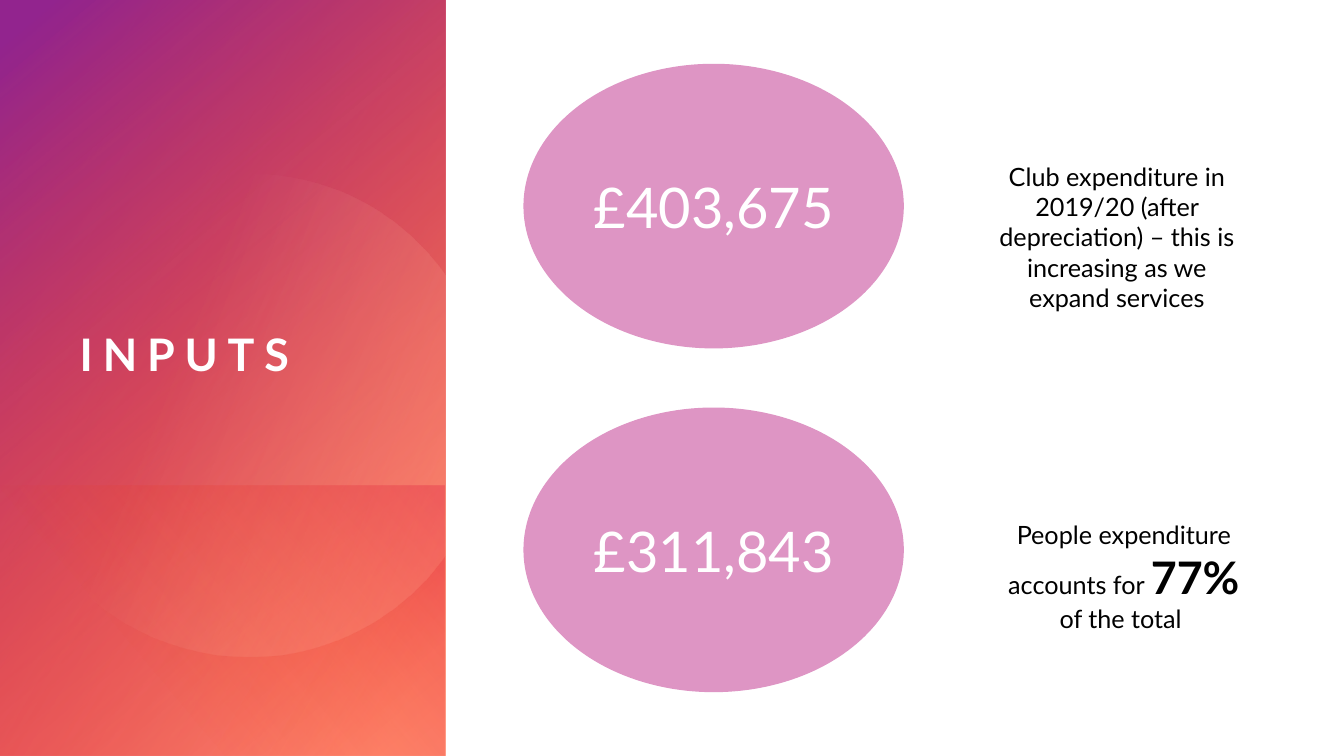
"""Builds the Inputs slide: a gradient title panel beside two expenditure figures."""
from dataclasses import dataclass

from lxml import etree
from pptx import Presentation
from pptx.dml.color import RGBColor
from pptx.enum.shapes import MSO_SHAPE
from pptx.enum.text import MSO_ANCHOR, MSO_AUTO_SIZE, PP_ALIGN
from pptx.oxml.ns import qn
from pptx.util import Emu, Inches, Pt

RECTANGLE, OVAL = MSO_SHAPE.RECTANGLE, MSO_SHAPE.OVAL
MIDDLE, BOTTOM = MSO_ANCHOR.MIDDLE, MSO_ANCHOR.BOTTOM
CENTER, LEFT = PP_ALIGN.CENTER, PP_ALIGN.LEFT
FIXED, GROW = MSO_AUTO_SIZE.NONE, MSO_AUTO_SIZE.SHAPE_TO_FIT_TEXT

WHITE = RGBColor(0xFF, 0xFF, 0xFF)
BLACK = RGBColor(0x00, 0x00, 0x00)
PINK = RGBColor(0xDE, 0x95, 0xC4)
CORAL = RGBColor(0xFF, 0x90, 0x7A)
CRIMSON = RGBColor(0xDA, 0x00, 0x2F)
ORANGE = RGBColor(0xFE, 0x4A, 0x00)
PURPLE = RGBColor(0x92, 0x24, 0x8E)
PEACH = RGBColor(0xFF, 0xDB, 0xCC)

FONT = "Lato"
SLIDE_WIDTH, SLIDE_HEIGHT = Inches(13.333), Inches(7.5)
PANEL_WIDTH = 33.15
OVAL_TOP, OVAL_PITCH = 8.53, 45.47
CURVE_STEPS = 24


@dataclass(frozen=True)
class Area:
    """A rectangle in percent of the slide's width and height."""
    left: float
    top: float
    width: float
    height: float

    def emu(self) -> tuple[Emu, Emu, Emu, Emu]:
        """Return left, top, width and height in EMU."""
        return (*point(self.left, self.top), *point(self.width, self.height))


@dataclass(frozen=True)
class Stop:
    """A gradient stop; position and opacity are percentages."""
    position: int
    color: RGBColor
    opacity: int = 100


@dataclass(frozen=True)
class Layer:
    """A gradient rectangle of the title panel."""
    area: Area
    stops: tuple[Stop, Stop]
    angle: float


@dataclass(frozen=True)
class Phrase:
    """A stretch of text in one format."""
    text: str
    size: int = 18
    bold: bool = False


@dataclass(frozen=True)
class Expenditure:
    """An amount and its explanation."""
    amount: str
    explanation: tuple[Phrase, ...]
    explanation_area: Area


PANEL = Area(0, 0, PANEL_WIDTH, 100)
LAYERS = (
    Layer(PANEL, (Stop(8, CORAL), Stop(100, CRIMSON, 72)), 60),
    Layer(PANEL, (Stop(0, ORANGE, 0), Stop(96, PURPLE)), 40),
    Layer(Area(0.08, 64.27, 33, 35.73), (Stop(2, CRIMSON, 35), Stop(67, ORANGE, 0)), 130),
)
CIRCLE_STOPS = (Stop(39, PEACH, 0), Stop(100, CORAL, 29))
CIRCLE_ANGLE = 21.6
CIRCLE_START = (18.53, 22.93)
CIRCLE_SEGMENTS = (
    ((19.65, 22.93), (20.93, 23.2), (22.13, 23.6)),
    ((26.4, 25.07), (29.93, 29.2), (32.48, 34.8)),
    ((PANEL_WIDTH, 36.4),),
    ((PANEL_WIDTH, 73.33),),
    ((32.25, 75.47),),
    ((28.13, 84.13), (21.53, 88.67), (14.85, 86.13)),
    ((5.1, 82.53), (-1.13, 65.73), (0.9, 48.4)),
    ((2.63, 33.33), (10.13, 22.8), CIRCLE_START),
)
TITLE_AREA = Area(5.93, 33.07, 23.25, 17.2)
EXPENDITURES = (
    Expenditure(
        "£403,675",
        (Phrase("Club expenditure in 2019/20 (after depreciation) – this is "
                "increasing as we expand services"),),
        Area(73.13, 20.67, 19.95, 21.6),
    ),
    Expenditure(
        "£311,843",
        (Phrase("People expenditure accounts for "), Phrase("77% ", 32, True),
         Phrase("of the total ")),
        Area(73.65, 68, 19.95, 16.67),
    ),
)


def point(x: float, y: float) -> tuple[Emu, Emu]:
    """Turn percentages of the slide into EMU."""
    return Emu(round(SLIDE_WIDTH * x / 100)), Emu(round(SLIDE_HEIGHT * y / 100))


def add_run(paragraph, phrase: Phrase, color: RGBColor):
    """Add a formatted run and return it."""
    run = paragraph.add_run()
    run.text = phrase.text
    run.font.name = FONT
    run.font.size = Pt(phrase.size)
    run.font.bold = phrase.bold
    run.font.color.rgb = color
    return run


def paint_gradient(shape, stops: tuple[Stop, ...], angle: float) -> None:
    """Give a shape a linear gradient without outline or shadow."""
    shape.shadow.inherit = False
    shape.line.fill.background()
    shape.fill.background()
    properties = shape._element.spPr
    gradient = etree.Element(qn("a:gradFill"), rotWithShape="1")
    stop_list = etree.SubElement(gradient, qn("a:gsLst"))
    for stop in stops:
        entry = etree.SubElement(stop_list, qn("a:gs"), pos=str(stop.position * 1000))
        color = etree.SubElement(entry, qn("a:srgbClr"), val=str(stop.color))
        etree.SubElement(color, qn("a:alpha"), val=str(stop.opacity * 1000))
    etree.SubElement(gradient, qn("a:lin"), ang=str(round(angle * 60000)), scaled="0")
    properties.replace(properties.find(qn("a:noFill")), gradient)


def add_layer(shapes, layer: Layer) -> None:
    """Draw a mirrored rectangle, turned by a quarter to fill the layer's area."""
    left, top, width, height = layer.area.emu()
    shift = (width - height) // 2
    shape = shapes.add_shape(RECTANGLE, left + shift, top - shift, height, width)
    shape.rotation = 90
    shape._element.spPr.find(qn("a:xfrm")).set("flipH", "1")
    paint_gradient(shape, layer.stops, layer.angle)


def circle_outline() -> list[tuple[Emu, Emu]]:
    """Return the points of the panel's cropped circle."""
    outline = [CIRCLE_START]
    for segment in CIRCLE_SEGMENTS:
        if len(segment) == 1:
            outline.append(segment[0])
            continue
        controls = (outline[-1], *segment)
        for step in range(1, CURVE_STEPS + 1):
            t = step / CURVE_STEPS
            weights = ((1 - t) ** 3, 3 * t * (1 - t) ** 2, 3 * t * t * (1 - t), t ** 3)
            outline.append(tuple(
                sum(w * c[axis] for w, c in zip(weights, controls)) for axis in (0, 1)))
    return [point(x, y) for x, y in outline]


def add_circle(shapes) -> None:
    """Draw the pale circle over the panel."""
    start, *rest = circle_outline()
    builder = shapes.build_freeform(*start)
    builder.add_line_segments(rest, close=True)
    paint_gradient(builder.convert_to_shape(), CIRCLE_STOPS, CIRCLE_ANGLE)


def add_title(shapes) -> None:
    """Place the title in front of the panel."""
    title = shapes.title
    title.left, title.top, title.width, title.height = TITLE_AREA.emu()
    shapes._spTree.append(title._element)
    frame = title.text_frame
    frame.margin_left = frame.margin_top = frame.margin_right = frame.margin_bottom = 0
    frame.auto_size, frame.vertical_anchor = FIXED, BOTTOM
    frame.paragraphs[0].alignment = LEFT
    run = add_run(frame.paragraphs[0], Phrase("INPUTS", 32, True), WHITE)
    run.font._element.set("spc", "700")


def add_expenditure(shapes, expenditure: Expenditure, row: int) -> None:
    """Draw an amount in an oval and its explanation beside it."""
    oval = shapes.add_shape(OVAL, *Area(39, OVAL_TOP + row * OVAL_PITCH, 28.2, 37.47).emu())
    oval.shadow.inherit = False
    oval.fill.solid()
    oval.fill.fore_color.rgb = oval.line.color.rgb = PINK
    oval.line.width = Pt(1)
    oval.text_frame.vertical_anchor = MIDDLE
    amount = oval.text_frame.paragraphs[0]
    amount.alignment = CENTER
    add_run(amount, Phrase(expenditure.amount, 40), WHITE)

    frame = shapes.add_textbox(*expenditure.explanation_area.emu()).text_frame
    frame.word_wrap, frame.auto_size = True, GROW
    explanation = frame.paragraphs[0]
    explanation.alignment = CENTER
    for phrase in expenditure.explanation:
        add_run(explanation, phrase, BLACK)


def main() -> None:
    """Build and save the slide."""
    deck = Presentation()
    deck.slide_width, deck.slide_height = SLIDE_WIDTH, SLIDE_HEIGHT
    shapes = deck.slides.add_slide(deck.slide_layouts[5]).shapes
    for layer in LAYERS:
        add_layer(shapes, layer)
    add_circle(shapes)
    add_title(shapes)
    for row, expenditure in enumerate(EXPENDITURES):
        add_expenditure(shapes, expenditure, row)
    deck.save("out.pptx")


if __name__ == "__main__":
    main()
